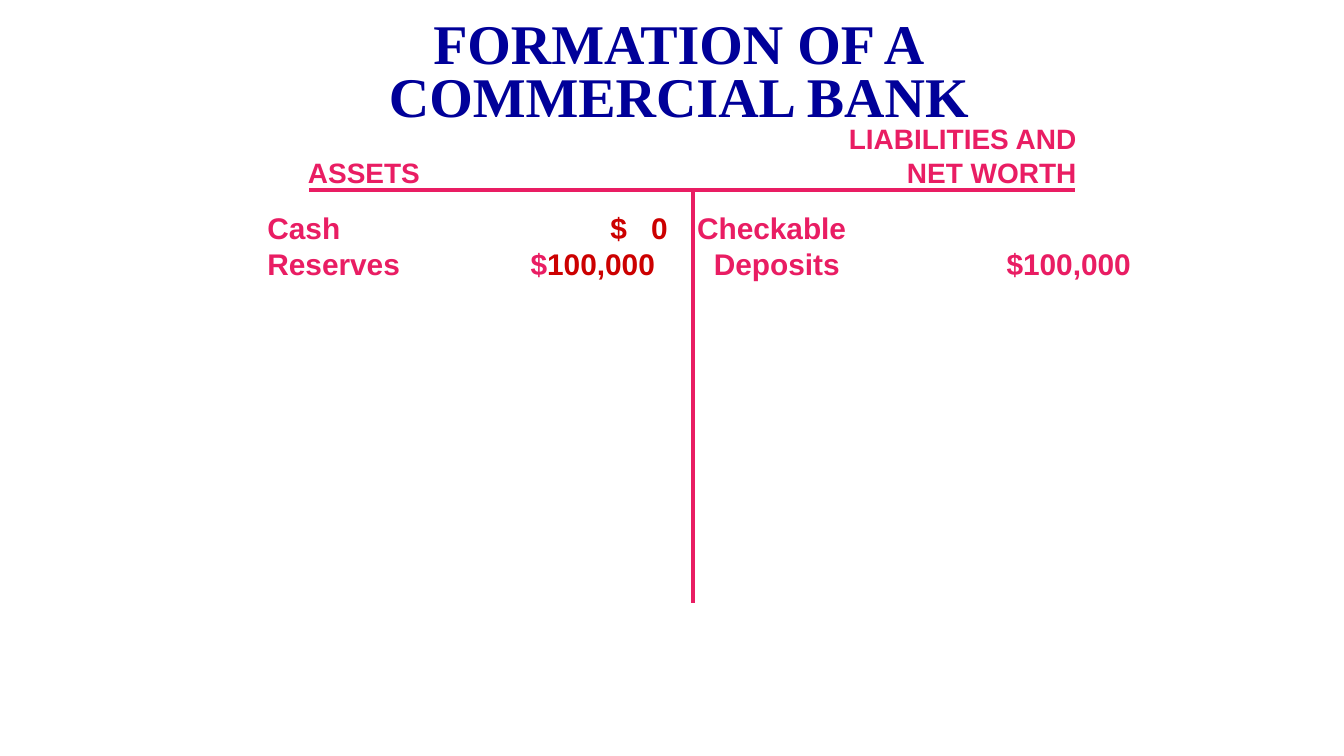
from lxml import etree
from pptx import Presentation
from pptx.dml.color import RGBColor
from pptx.enum.shapes import MSO_CONNECTOR
from pptx.enum.text import MSO_ANCHOR, MSO_AUTO_SIZE, PP_ALIGN
from pptx.oxml.ns import qn
from pptx.util import Pt

STRAIGHT = MSO_CONNECTOR.STRAIGHT
TOP = MSO_ANCHOR.TOP
NO_FIT = MSO_AUTO_SIZE.NONE
LEFT, CENTER, RIGHT = PP_ALIGN.LEFT, PP_ALIGN.CENTER, PP_ALIGN.RIGHT
PX = 9525  # 96 px to the inch
TITLE_ONLY = 5

THEME = {
    "pink": RGBColor(0xE9, 0x1D, 0x63),
    "red": RGBColor(0xCC, 0x00, 0x00),
    "navy": RGBColor(0x00, 0x00, 0x99),
    "sans": "Arial",
    "serif": "Times New Roman",
    "title": 30,
    "heading": 15,
    "entry": 16,
}


def place(s, x, y, w, h, wrap=False):
    """Position a text shape, set its margins and return its text frame."""
    s.left, s.top, s.width, s.height = (v * PX for v in (x, y, w, h))
    tf = s.text_frame
    tf.margin_left = tf.margin_right = tf.margin_top = tf.margin_bottom = 4 * PX
    tf.auto_size = NO_FIT
    tf.word_wrap = wrap
    tf.vertical_anchor = TOP
    return tf


def write(tf, *parts, size="entry", font="sans", color="pink", align=LEFT,
          spacing=None, tabs=()):
    """Write one paragraph; a part is a text or a (text, colour) pair."""
    p = tf.paragraphs[0]
    if p.runs:
        p = tf.add_paragraph()
    p.alignment = align
    p.line_spacing = spacing
    if tabs:
        tab_list = etree.SubElement(p._p.get_or_add_pPr(), qn("a:tabLst"))
        for x in tabs:
            etree.SubElement(tab_list, qn("a:tab"), pos=str(x * PX), algn="l")
    for part in parts:
        text, tone = (part, color) if isinstance(part, str) else part
        r = p.add_run()
        r.text = text
        r.font.name = THEME[font]
        r.font.size = Pt(THEME[size])
        r.font.bold = True
        r.font.color.rgb = THEME[tone]


prs = Presentation()
prs.slide_width, prs.slide_height = 960 * PX, 540 * PX
slide = prs.slides.add_slide(prs.slide_layouts[TITLE_ONLY])
shapes = slide.shapes

# T-account rules
for x1, y1, x2, y2 in [(221, 136, 768, 136), (495, 136, 495, 431)]:
    rule = shapes.add_connector(STRAIGHT, x1 * PX, y1 * PX, x2 * PX, y2 * PX)
    rule.line.color.rgb = THEME["pink"]
    rule.line.width = Pt(2)
    etree.SubElement(rule._element.spPr, qn("a:effectLst"))

# Title
tf = place(shapes.title, 264, 11, 442, 87)
for line in ("FORMATION OF A", "COMMERCIAL BANK"):
    write(tf, line, size="title", font="serif", color="navy", align=CENTER, spacing=0.8)

# Column headings
headings = [
    ((216, 107, 88, 29), LEFT, ["ASSETS"]),
    ((602, 83, 171, 52), RIGHT, ["LIABILITIES AND", "NET WORTH"]),
]
for box, align, lines in headings:
    tf = place(shapes.add_textbox(0, 0, 0, 0), *box)
    for line in lines:
        write(tf, line, size="heading", align=align)

# Assets
tf = place(shapes.add_textbox(0, 0, 0, 0), 187, 146, 338, 55, wrap=True)
write(tf, "Cash\t", ("$\t0", "red"), tabs=(245, 274))
write(tf, "Reserves\t$", ("100,000", "red"), tabs=(188,))

# Liabilities and net worth
tf = place(shapes.add_textbox(0, 0, 0, 0), 494, 146, 319, 55, wrap=True)
write(tf, "Checkable")
write(tf, "\tDeposits\t$100,000", tabs=(12, 221))

prs.save("out.pptx")
